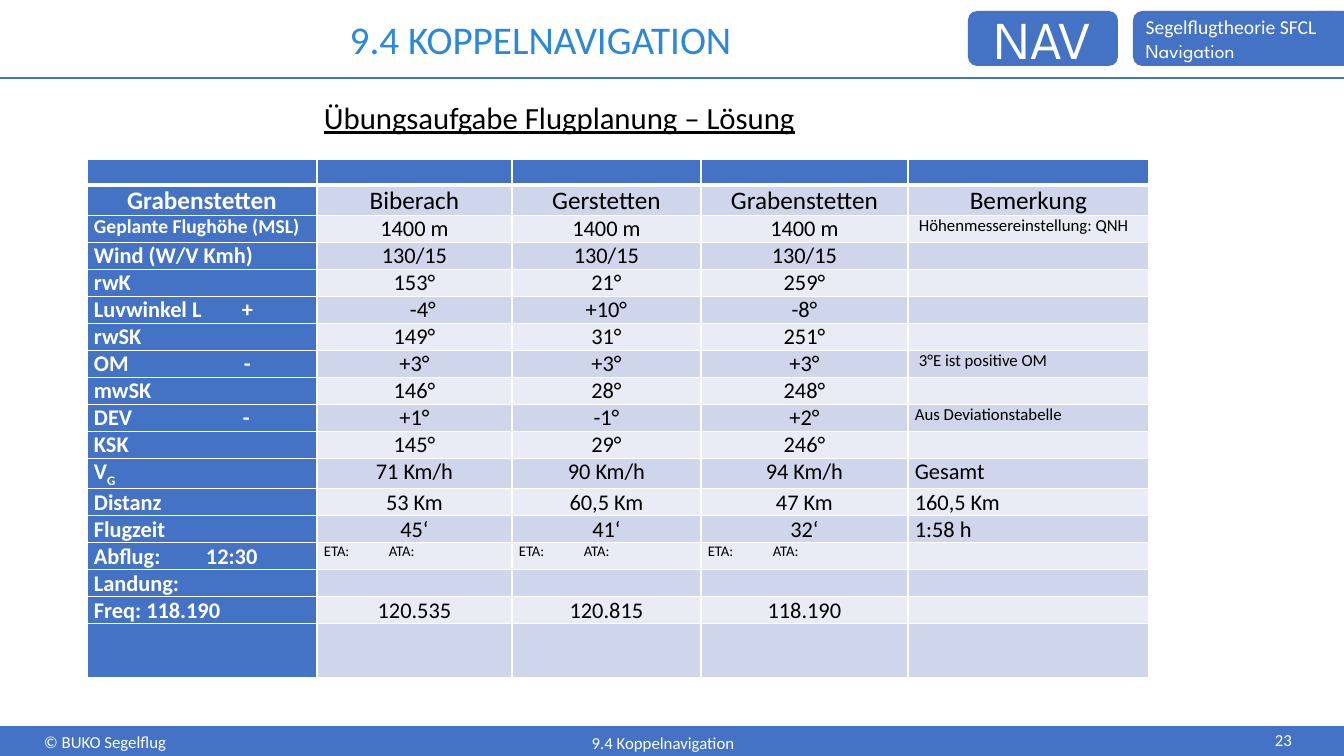
from lxml.etree import SubElement
from pptx import Presentation
from pptx.dml.color import RGBColor
from pptx.enum.shapes import MSO_CONNECTOR, MSO_SHAPE
from pptx.enum.text import MSO_ANCHOR, PP_ALIGN
from pptx.oxml.ns import qn
from pptx.util import Pt

EMU_PER_PX = 914400 / 100.8
BLUE, TITLE_BLUE, WHITE, BLACK = "4472C4", "2B88D9", "FFFFFF", "000000"
BANDS = ("E9EBF5", "CFD5EA")
BODY_FONT, BADGE_FONT = "Calibri", "League Spartan"
LEFT, CENTER = PP_ALIGN.LEFT, PP_ALIGN.CENTER

COLUMN_WIDTHS = (230, 195, 189, 207, 241)
HEADER_HEIGHT, PLACES_HEIGHT, ROW_HEIGHT, LAST_HEIGHT = 26, 29, 27, 54
ETA = "ETA:\tATA:"
# An underscore starts a subscript.
FLIGHT_PLAN = [
    ("", "", "", "", ""),
    ("Grabenstetten", "Biberach", "Gerstetten", "Grabenstetten", "Bemerkung"),
    ("Geplante Flughöhe (MSL)", "1400 m", "1400 m", "1400 m", "Höhenmessereinstellung: QNH"),
    ("Wind (W/V Kmh)", "130/15", "130/15", "130/15", ""),
    ("rwK", "153°", "21°", "259°", ""),
    ("Luvwinkel L\t+", "-4°", "+10°", "-8°", ""),
    ("rwSK", "149°", "31°", "251°", ""),
    ("OM\t-", "+3°", "+3°", "+3°", "3°E ist positive OM"),
    ("mwSK", "146°", "28°", "248°", ""),
    ("DEV\t-", "+1°", "-1°", "+2°", "Aus Deviationstabelle"),
    ("KSK", "145°", "29°", "246°", ""),
    ("V_G", "71 Km/h", "90 Km/h", "94 Km/h", "Gesamt"),
    ("Distanz", "53 Km", "60,5 Km", "47 Km", "160,5 Km"),
    ("Flugzeit", "45‘", "41‘", "32‘", "1:58 h"),
    ("Abflug:\t12:30", ETA, ETA, ETA, ""),
    ("Landung:", "", "", "", ""),
    ("Freq: 118.190", "120.535", "120.815", "118.190", ""),
    ("", "", "", "", ""),
]
SPECIAL_CELLS = {
    "Geplante Flughöhe (MSL)": {"size": 14},
    "Höhenmessereinstellung: QNH": {"size": 12, "indent": 4},
    "3°E ist positive OM": {"size": 12, "indent": 4},
    "Aus Deviationstabelle": {"size": 12},
    "Luvwinkel L\t+": {"tab": 148},
    "OM\t-": {"tab": 150},
    "DEV\t-": {"tab": 149},
    "Abflug:\t12:30": {"tab": 112},
    "-4°": {"align": LEFT, "indent": 86},
    ETA: {"size": 10.5, "align": LEFT, "tab": 65},
}


def px(length):
    return round(length * EMU_PER_PX)


def color(hex_string):
    return RGBColor.from_string(hex_string)


def add_run(paragraph, text, size, hex_string, font=BODY_FONT, bold=False, underline=False):
    run = paragraph.add_run()
    run.text = text
    run.font.name, run.font.size = font, Pt(size)
    run.font.color.rgb = color(hex_string)
    run.font.bold, run.font.underline = bold, underline
    return run


def add_text(slide, box, text, size, hex_string, align=LEFT, anchor=MSO_ANCHOR.TOP,
             spacing=1.0, underline=False):
    frame = slide.shapes.add_textbox(*map(px, box)).text_frame
    frame.word_wrap, frame.vertical_anchor = True, anchor
    paragraph = frame.paragraphs[0]
    paragraph.alignment, paragraph.line_spacing = align, spacing
    add_run(paragraph, text, size, hex_string, underline=underline)


def add_block(slide, box, kind=MSO_SHAPE.RECTANGLE):
    block = slide.shapes.add_shape(kind, *map(px, box))
    block.shadow.inherit = False
    block.fill.solid()
    block.fill.fore_color.rgb = color(BLUE)
    block.line.fill.background()
    return block


def add_badge(slide, box, lines, align):
    frame = add_block(slide, box, MSO_SHAPE.ROUNDED_RECTANGLE).text_frame
    frame.word_wrap, frame.vertical_anchor = True, MSO_ANCHOR.MIDDLE
    for index, (text, size, font) in enumerate(lines):
        paragraph = frame.add_paragraph() if index else frame.paragraphs[0]
        paragraph.alignment = align
        add_run(paragraph, text, size, WHITE, font)


def add_rule(slide, left, top, width):
    rule = slide.shapes.add_connector(
        MSO_CONNECTOR.STRAIGHT, px(left), px(top), px(left + width), px(top))
    rule.line.color.rgb, rule.line.width = color(BLUE), Pt(1.25)
    SubElement(rule._element.spPr, qn("a:effectLst"))


def add_header(slide, left, top, width, height):
    add_badge(slide, (left + 968, top + 11, 150, 55), [("NAV", 38, BADGE_FONT)], CENTER)
    add_badge(slide, (left + width - 211, top + 11, 211, 55),
              [("Segelflugtheorie SFCL", 14, BODY_FONT), ("Navigation", 14, BADGE_FONT)], LEFT)
    add_block(slide, (left + width - 25, top + 11, 25, 55))
    add_rule(slide, left, top + height, width)
    add_text(slide, (left + 105, top + 14, 871, 55), "9.4 KOPPELNAVIGATION", 28, TITLE_BLUE,
             CENTER, MSO_ANCHOR.MIDDLE, 0.9)


def add_footer(slide, left, top, width, height):
    add_block(slide, (left, top, width, height))
    add_rule(slide, left, top, width)
    add_text(slide, (left + 34, top, 143, height), "© BUKO Segelflug", 12, WHITE)
    add_text(slide, (left + 167, top + 3, 992, height), "9.4 Koppelnavigation", 12, WHITE,
             CENTER, spacing=0.9)
    add_text(slide, (left + width - 79, top - 2, 59, height), "23", 12, WHITE)


def add_border(cell, side, points):
    line = SubElement(cell._tc.get_or_add_tcPr(), qn(f"a:ln{side}"), w=str(Pt(points)))
    fill = SubElement(line, qn("a:solidFill"))
    SubElement(fill, qn("a:srgbClr"), val=WHITE)


def fill_cell(cell, text, size, hex_string, bold, align, indent=0, tab=0):
    cell.margin_left = cell.margin_right = px(7)
    cell.margin_top = cell.margin_bottom = 0
    paragraph = cell.text_frame.paragraphs[0]
    if not text:
        SubElement(paragraph._p, qn("a:endParaRPr"), sz="1000")
        return
    paragraph.alignment = align
    properties = paragraph._p.get_or_add_pPr()
    if indent:
        properties.set("marL", str(px(indent)))
    if tab:
        stops = SubElement(properties, qn("a:tabLst"))
        SubElement(stops, qn("a:tab"), pos=str(px(tab)), algn="l")
    base, _, subscript = text.partition("_")
    add_run(paragraph, base, size, hex_string, bold=bold)
    if subscript:
        run = add_run(paragraph, subscript, size, hex_string, bold=bold)
        run._r.get_or_add_rPr().set("baseline", "-25000")


def add_flight_plan(slide, left, top):
    middle_rows = len(FLIGHT_PLAN) - 3
    heights = [HEADER_HEIGHT, PLACES_HEIGHT] + [ROW_HEIGHT] * middle_rows + [LAST_HEIGHT]
    table = slide.shapes.add_table(
        len(heights), len(COLUMN_WIDTHS), px(left), px(top),
        px(sum(COLUMN_WIDTHS)), px(sum(heights))).table
    table.first_row = table.horz_banding = False
    for column, width in zip(table.columns, COLUMN_WIDTHS):
        column.width = px(width)
    for row_index, values in enumerate(FLIGHT_PLAN):
        table.rows[row_index].height = px(heights[row_index])
        for column_index, text in enumerate(values):
            cell = table.cell(row_index, column_index)
            is_label, is_remark = column_index == 0, column_index == len(values) - 1
            is_place = row_index == 1
            style = {
                "size": 18 if is_place else 16,
                "align": CENTER if is_place or not (is_label or is_remark) else LEFT,
                **SPECIAL_CELLS.get(text, {}),
            }
            fill_cell(cell, text, hex_string=WHITE if is_label else BLACK, bold=is_label, **style)
            for side in "LRTB":
                under_header = (row_index, side) in ((0, "B"), (1, "T"))
                add_border(cell, side, 3 if under_header else 1)
            cell.fill.solid()
            is_blue = is_label or row_index == 0
            cell.fill.fore_color.rgb = color(BLUE if is_blue else BANDS[row_index % 2])


def main():
    presentation = Presentation()
    presentation.slide_width, presentation.slide_height = px(1344), px(756)
    slide = presentation.slides.add_slide(presentation.slide_layouts[6])
    add_footer(slide, 0, 727, 1344, 31)
    add_header(slide, 0, 0, 1344, 78)
    add_text(slide, (314, 98, 643, 52), "Übungsaufgabe Flugplanung – Lösung", 22, BLACK,
             spacing=0.9, underline=True)
    add_flight_plan(slide, 87, 159)
    presentation.save("out.pptx")


if __name__ == "__main__":
    main()
